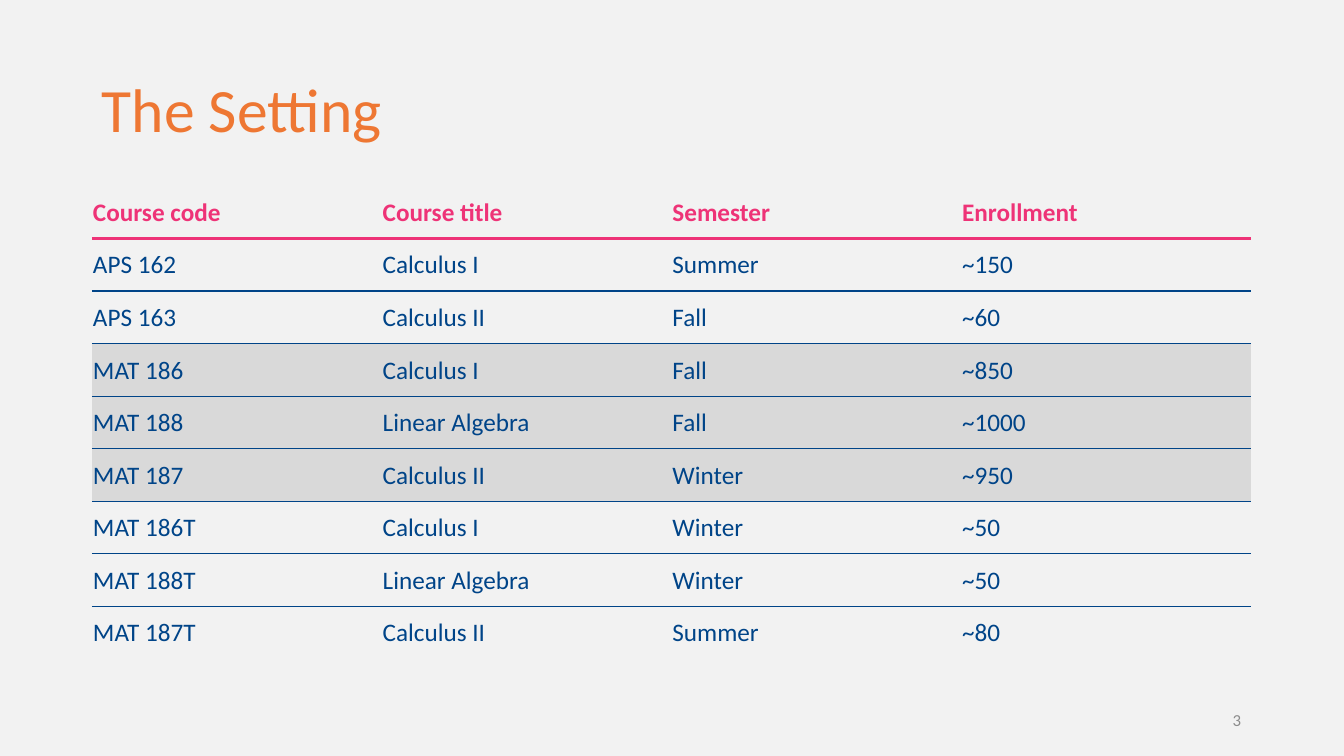
from lxml import etree
from pptx import Presentation
from pptx.dml.color import RGBColor
from pptx.enum.text import MSO_ANCHOR, PP_ALIGN
from pptx.oxml.ns import qn
from pptx.util import Emu, Pt

MIDDLE = MSO_ANCHOR.MIDDLE
LEFT, RIGHT = PP_ALIGN.LEFT, PP_ALIGN.RIGHT

SLIDE_W, SLIDE_H = 1344, 756
EMU_PER_PX = 12192000 / SLIDE_W
FONT = "Calibri"
NO_STYLE = "{2D5ABB26-0587-4C30-8999-92F81FD0307C}"
COLORS = {
    "background": "F2F2F2",
    "title": "EE7733",
    "header": "EE3377",
    "body": "004488",
    "highlight": "D9D9D9",
    "number": "8C8C8C",
}

COURSES = [
    ("Course code", "Course title", "Semester", "Enrollment"),
    ("APS 162", "Calculus I", "Summer", "~150"),
    ("APS 163", "Calculus II", "Fall", "~60"),
    ("MAT 186", "Calculus I", "Fall", "~850"),
    ("MAT 188", "Linear Algebra", "Fall", "~1000"),
    ("MAT 187", "Calculus II", "Winter", "~950"),
    ("MAT 186T", "Calculus I", "Winter", "~50"),
    ("MAT 188T", "Linear Algebra", "Winter", "~50"),
    ("MAT 187T", "Calculus II", "Summer", "~80"),
]
HIGHLIGHTED = {"MAT 186", "MAT 188", "MAT 187"}


def px(length):
    return Emu(round(length * EMU_PER_PX))


def color(name):
    return RGBColor.from_string(COLORS[name])


def style_font(paragraph, size, color_name, bold=False):
    font = paragraph.font
    font.name, font.size, font.bold = FONT, Pt(size), bold
    font.color.rgb = color(color_name)


def add_text(slide, text, box, size, color_name, align=LEFT):
    frame = slide.shapes.add_textbox(*map(px, box)).text_frame
    frame.word_wrap = True
    frame.vertical_anchor = MIDDLE
    paragraph = frame.paragraphs[0]
    paragraph.text = text
    paragraph.alignment = align
    paragraph.line_spacing = 0.9
    style_font(paragraph, size, color_name)


def add_border(cell, side, color_name, width):
    cell_props = cell._tc.get_or_add_tcPr()
    line = etree.SubElement(cell_props, qn(f"a:ln{side}"), w=str(Pt(width)))
    fill = etree.SubElement(line, qn("a:solidFill"))
    etree.SubElement(fill, qn("a:srgbClr"), val=COLORS[color_name])


def fill_cell(cell, text, is_header, is_highlighted):
    cell.margin_left = cell.margin_right = cell.margin_top = px(1)
    cell.margin_bottom = 0
    cell.vertical_anchor = MIDDLE
    paragraph = cell.text_frame.paragraphs[0]
    paragraph.text = text
    style_font(paragraph, 18, "header" if is_header else "body", is_header)
    if is_highlighted:
        cell.fill.solid()
        cell.fill.fore_color.rgb = color("highlight")
    else:
        cell.fill.background()


def add_course_table(slide, courses, box):
    row_count, column_count = len(courses), len(courses[0])
    table = slide.shapes.add_table(row_count, column_count, *map(px, box)).table
    table.first_row = table.horz_banding = False
    table._tbl.tblPr.find(qn("a:tableStyleId")).text = NO_STYLE
    for column in table.columns:
        column.width = px(box[2] / column_count)

    for r, course in enumerate(courses):
        table.rows[r].height = px(box[3] / row_count)
        for c, text in enumerate(course):
            cell = table.cell(r, c)
            # Rules run between rows only; the one under the header is heavy
            if r > 0:
                add_border(cell, "T", *rule_below(r - 1))
            if r < row_count - 1:
                add_border(cell, "B", *rule_below(r))
            fill_cell(cell, text, r == 0, course[0] in HIGHLIGHTED)


def rule_below(row):
    return ("header", 3) if row == 0 else ("body", 1)


def main():
    prs = Presentation()
    prs.slide_width, prs.slide_height = px(SLIDE_W), px(SLIDE_H)
    slide = prs.slides.add_slide(prs.slide_layouts[6])
    slide.background.fill.solid()
    slide.background.fill.fore_color.rgb = color("background")

    # Title
    add_text(slide, "The Setting", (92, 40, 1159, 146), 44, "title")
    # Courses
    add_course_table(slide, COURSES, (92, 186, 1159, 473))
    # Slide number
    add_text(slide, "3", (949, 701, 302, 40), 12, "number", RIGHT)

    prs.save("out.pptx")


if __name__ == "__main__":
    main()
